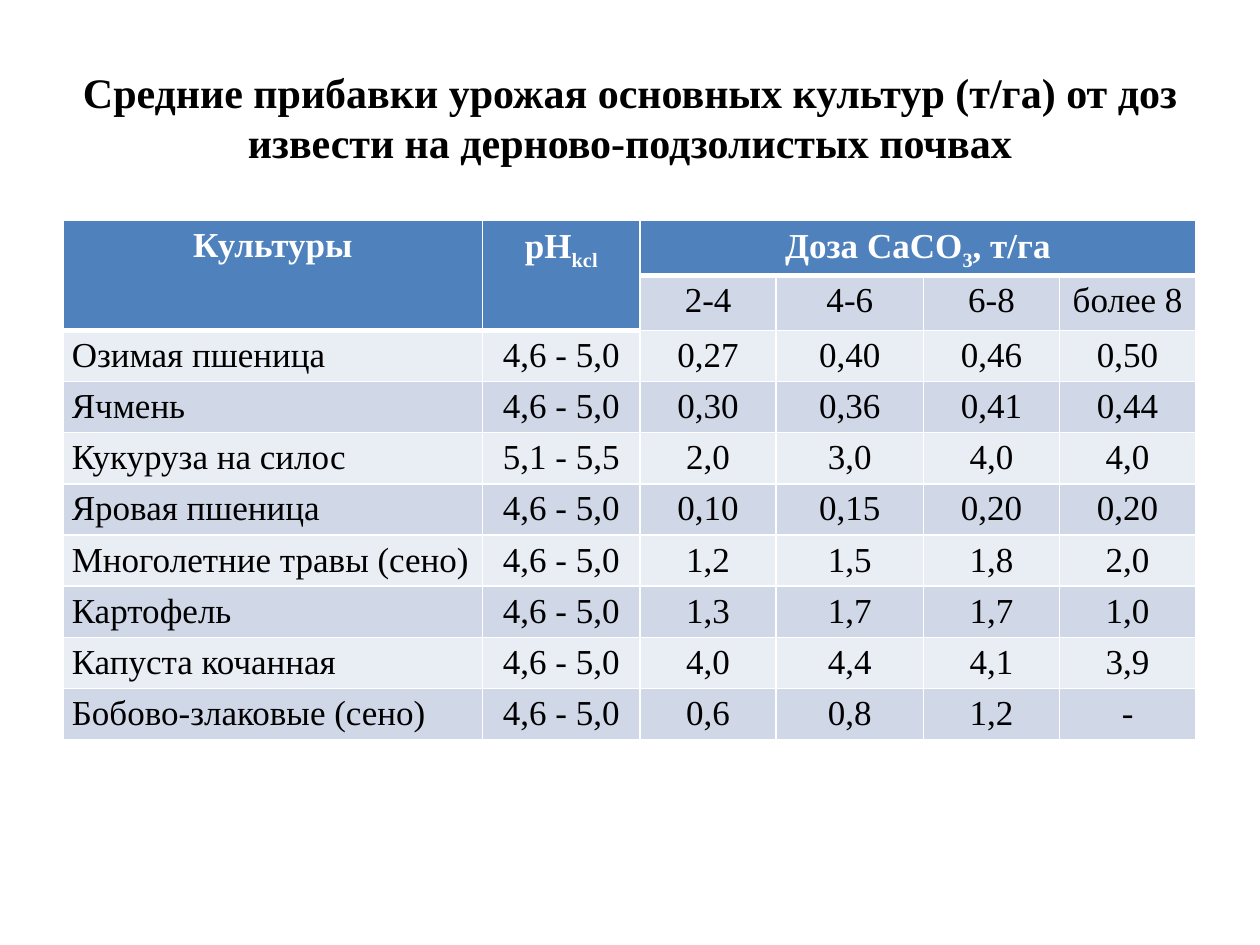
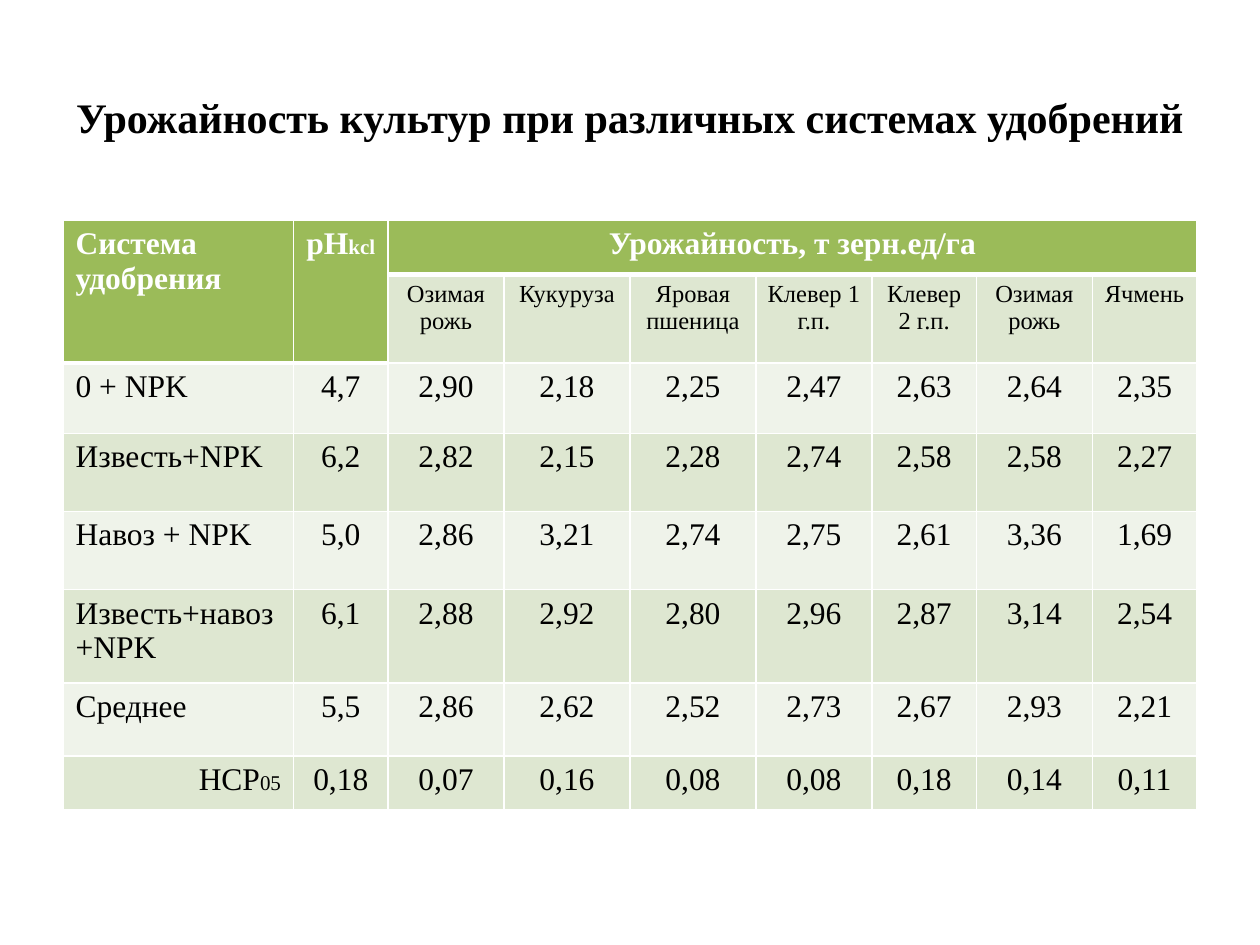
from lxml import etree
from pptx import Presentation
from pptx import util as u
from pptx.dml.color import RGBColor
from pptx.enum import text
from pptx.oxml.ns import qn

# Content: text between underscores is a subscript
LIMING = {
    "title": "Средние прибавки урожая основных культур (т/га) от доз извести на дерново-подзолистых почвах",
    "head": ["Культуры", "рН_kcl_", "Доза СаСО_3_, т/га"],
    "subhead": ["2-4", "4-6", "6-8", "более 8"],
    "body": [
        ["Озимая пшеница", "4,6 - 5,0", "0,27", "0,40", "0,46", "0,50"],
        ["Ячмень", "4,6 - 5,0", "0,30", "0,36", "0,41", "0,44"],
        ["Кукуруза на силос", "5,1 - 5,5", "2,0", "3,0", "4,0", "4,0"],
        ["Яровая пшеница", "4,6 - 5,0", "0,10", "0,15", "0,20", "0,20"],
        ["Многолетние травы (сено)", "4,6 - 5,0", "1,2", "1,5", "1,8", "2,0"],
        ["Картофель", "4,6 - 5,0", "1,3", "1,7", "1,7", "1,0"],
        ["Капуста кочанная", "4,6 - 5,0", "4,0", "4,4", "4,1", "3,9"],
        ["Бобово-злаковые (сено)", "4,6 - 5,0", "0,6", "0,8", "1,2", "-"],
    ],
    "columns": [3.33, 1.25, 1.08, 1.17, 1.08, 1.08],
    "rows": [4.06 / 10] * 10,
    "theme": "blue",
    "size": 20,
    "subhead_size": 20,
    "subscript_size": None,
    "spacing": 1.15,
    "margins": (0.07, 0),
    "subhead_margin": 0.07,
    "align": {(0, 0): "center"},
}
FERTILIZERS = {
    "title": "Урожайность культур при различных системах удобрений",
    "head": ["Система удобрения", "рН_kcl_", "Урожайность, т зерн.ед/га"],
    "subhead": ["Озимая рожь", "Кукуруза", "Яровая пшеница", "Клевер 1 г.п.",
                "Клевер 2 г.п.", "Озимая рожь", "Ячмень"],
    "body": [
        ["0 + NPK", "4,7", "2,90", "2,18", "2,25", "2,47", "2,63", "2,64", "2,35"],
        ["Известь+NPK", "6,2", "2,82", "2,15", "2,28", "2,74", "2,58", "2,58", "2,27"],
        ["Навоз + NPK", "5,0", "2,86", "3,21", "2,74", "2,75", "2,61", "3,36", "1,69"],
        ["Известь+навоз+NPK", "6,1", "2,88", "2,92", "2,80", "2,96", "2,87", "3,14", "2,54"],
        ["Среднее", "5,5", "2,86", "2,62", "2,52", "2,73", "2,67", "2,93", "2,21"],
        ["НСР_05_", "0,18", "0,07", "0,16", "0,08", "0,08", "0,18", "0,14", "0,11"],
    ],
    "columns": [1.83, 0.75, 0.92, 1, 1, 0.92, 0.83, 0.92, 0.83],
    "rows": [0.43, 0.64, 0.56, 0.62, 0.62, 0.74, 0.58, 0.43],
    "theme": "green",
    "size": 18,
    "subhead_size": 14,
    "subscript_size": 12,
    "spacing": None,
    "margins": (0.1, 0.05),
    "subhead_margin": 0.07,
    "align": {(7, 0): "right"},
}
FERTILIZERS["rows"][1] = 0.6

# Shared look
COLORS = {"black": "000000", "white": "FFFFFF"}
THEMES = {
    "blue": {"head": "4F81BD", "bands": ("E9EDF4", "D0D8E8")},
    "green": {"head": "9BBB59", "bands": ("EFF3EA", "DEE7D1")},
}
FONT = "Times New Roman"
TITLE_SIZE, EMPTY_SIZE = 24, 10
WIDTH, HEIGHT = 10, 7.5
LEFT, TITLE_TOP, TITLE_HEIGHT, TABLE_TOP = 0.05 * WIDTH, 0.04 * HEIGHT, 1.25, 1.75
ALIGN = {"left": text.PP_ALIGN.LEFT, "center": text.PP_ALIGN.CENTER, "right": text.PP_ALIGN.RIGHT}
LINE, HEAVY_LINE = 1, 3


def add_runs(paragraph, content, size, color, bold, subscript_size=None):
    for index, part in enumerate(content.split("_")):
        if not part:
            continue
        run = paragraph.add_run()
        run.text = part
        run.font.name, run.font.size, run.font.bold = FONT, u.Pt(size), bold
        run.font.color.rgb = RGBColor.from_string(COLORS[color])
        if index % 2 and subscript_size:
            run.font.size = u.Pt(subscript_size)
        elif index % 2:
            run._r.get_or_add_rPr().set("baseline", "-25000")


def add_title(slide, title):
    box = slide.shapes.add_textbox(u.Inches(LEFT), u.Inches(TITLE_TOP),
                                   u.Inches(WIDTH - 2 * LEFT), u.Inches(TITLE_HEIGHT))
    frame = box.text_frame
    frame.word_wrap = True
    frame.vertical_anchor = text.MSO_ANCHOR.MIDDLE
    paragraph = frame.paragraphs[0]
    paragraph.alignment = ALIGN["center"]
    add_runs(paragraph, title, TITLE_SIZE, "black", True)


def set_borders(cell, top, bottom):
    properties = cell._tc.get_or_add_tcPr()
    for side, width in (("L", LINE), ("R", LINE), ("T", top), ("B", bottom)):
        line = etree.SubElement(properties, qn(f"a:ln{side}"), w=str(u.Pt(width)))
        fill = etree.SubElement(line, qn("a:solidFill"))
        etree.SubElement(fill, qn("a:srgbClr"), val=COLORS["white"])


def is_head(row, column):
    return row == 0 or (row == 1 and column < 2)


def add_data_table(slide, data):
    widths, heights = data["columns"], data["rows"]
    table = slide.shapes.add_table(
        len(heights), len(widths), u.Inches(LEFT), u.Inches(TABLE_TOP),
        u.Inches(sum(widths)), u.Inches(sum(heights))).table
    for column, width in zip(table.columns, widths):
        column.width = u.Inches(width)
    for row, height in zip(table.rows, heights):
        row.height = u.Inches(height)

    # Two header rows: the first two columns span both, the group heading spans the rest
    for column in (0, 1):
        table.cell(0, column).merge(table.cell(1, column))
    table.cell(0, 2).merge(table.cell(0, len(widths) - 1))
    blanks = [""] * (len(widths) - 3)
    grid = [data["head"] + blanks, ["", ""] + data["subhead"]] + data["body"]

    theme = THEMES[data["theme"]]
    for row, contents in enumerate(grid):
        for column, content in enumerate(contents):
            cell = table.cell(row, column)
            head = is_head(row, column)
            below_head = row > 0 and is_head(row - 1, column) and not head
            set_borders(cell, HEAVY_LINE if below_head else LINE, HEAVY_LINE if head else LINE)
            cell.fill.solid()
            cell.fill.fore_color.rgb = RGBColor.from_string(
                theme["head"] if head else theme["bands"][row % 2])
            side_margin, end_margin = data["margins"]
            if row == 1:
                side_margin = data["subhead_margin"]
            cell.margin_left = cell.margin_right = u.Inches(side_margin)
            cell.margin_top = cell.margin_bottom = u.Inches(end_margin)
            paragraph = cell.text_frame.paragraphs[0]
            if not content:
                # Keep covered cells from stretching their row
                etree.SubElement(paragraph._p, qn("a:endParaRPr"), sz=str(EMPTY_SIZE * 100))
                continue
            paragraph.line_spacing = data["spacing"]
            default = "center" if column else "left"
            paragraph.alignment = ALIGN[data["align"].get((row, column), default)]
            add_runs(paragraph, content, data["subhead_size"] if row == 1 else data["size"],
                     "white" if head else "black", head, data["subscript_size"])


def main():
    presentation = Presentation()
    presentation.slide_width, presentation.slide_height = u.Inches(WIDTH), u.Inches(HEIGHT)
    for data in (LIMING, FERTILIZERS):
        slide = presentation.slides.add_slide(presentation.slide_layouts[6])
        add_title(slide, data["title"])
        add_data_table(slide, data)
    presentation.save("out.pptx")


if __name__ == "__main__":
    main()
